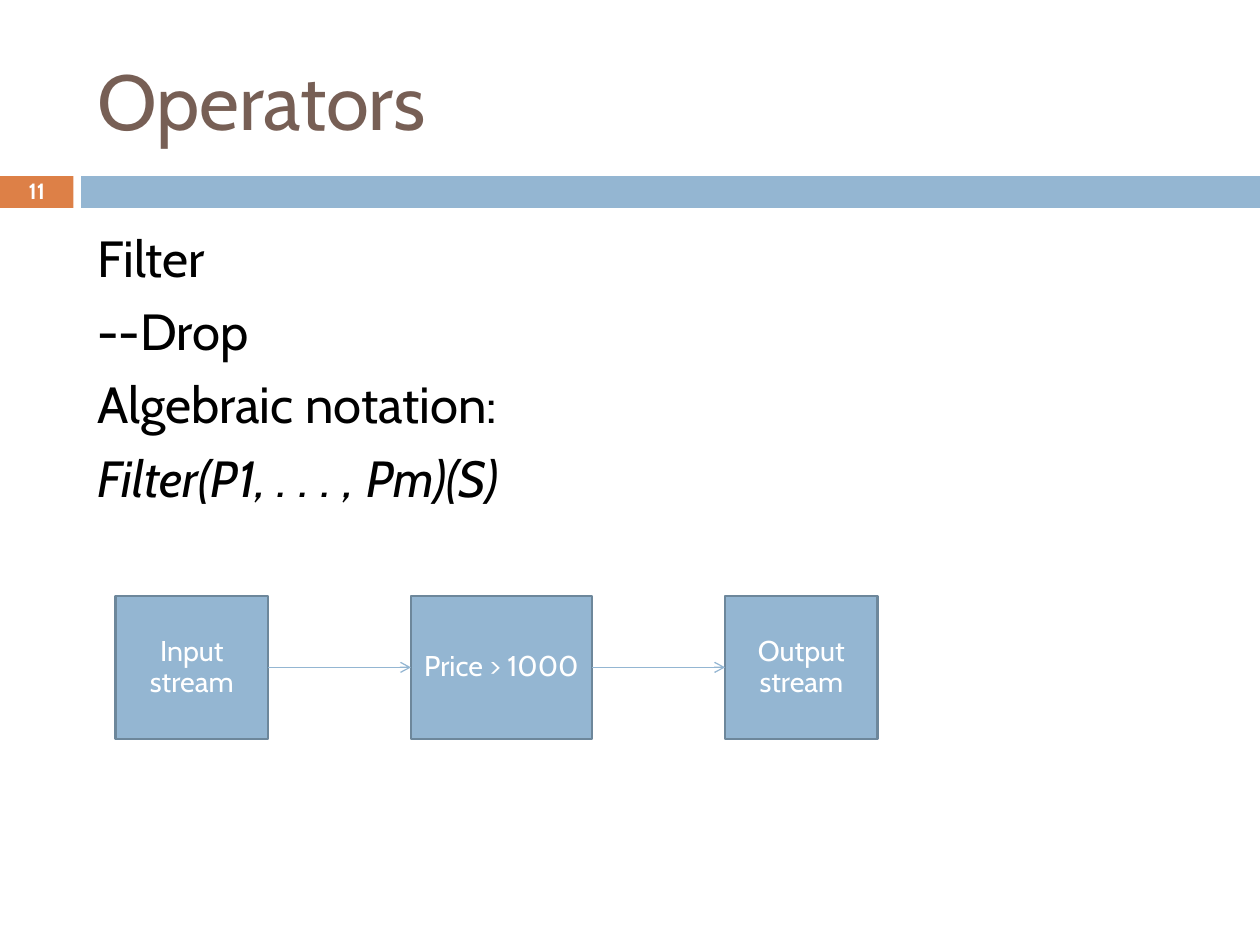
from lxml import etree
from pptx import Presentation
from pptx.dml.color import RGBColor
from pptx.enum.shapes import MSO_CONNECTOR, MSO_SHAPE
from pptx.enum.text import MSO_ANCHOR, MSO_AUTO_SIZE, PP_ALIGN
from pptx.oxml.ns import qn
from pptx.util import Pt

RECT = MSO_SHAPE.RECTANGLE
LINE = MSO_CONNECTOR.STRAIGHT
LEFT, CENTER = PP_ALIGN.LEFT, PP_ALIGN.CENTER
TOP, MIDDLE = MSO_ANCHOR.TOP, MSO_ANCHOR.MIDDLE
FIXED = MSO_AUTO_SIZE.NONE

WHITE = RGBColor(0xFF, 0xFF, 0xFF)
BLACK = RGBColor(0, 0, 0)
BROWN = RGBColor(0x77, 0x5F, 0x55)
ORANGE = RGBColor(0xDD, 0x80, 0x47)
BLUE = RGBColor(0x94, 0xB6, 0xD2)
SLATE = RGBColor(0x6D, 0x87, 0x9B)

WIDTH, HEIGHT = 793.7, 595.28
BOX_TOP, BOX_TALL = 375.4, 90
ITEMS = ["Filter", "--Drop", "Algebraic notation:", "Filter(P1, . . . , Pm)(S)"]
STEPS = [
    ("Input stream", 72.8, 96),
    ("Price > 1000", 258.9, 114),
    ("Output stream", 456.8, 96),
]


def place(shape, left, top, width, height):
    shape.left, shape.top = Pt(left), Pt(top)
    shape.width, shape.height = Pt(width), Pt(height)


def frame(shape, anchor, side=7.9, edge=4):
    text = shape.text_frame
    text.word_wrap = True
    text.auto_size = FIXED
    text.vertical_anchor = anchor
    text.margin_left = text.margin_right = Pt(side)
    text.margin_top = text.margin_bottom = Pt(edge)
    return text


def style(para, size, color, align=LEFT):
    para.alignment = align
    para.font.name = "Cabin"
    para.font.size = Pt(size)
    para.font.color.rgb = color


def add_rect(slide, left, top, width, height, fill):
    rect = slide.shapes.add_shape(RECT, Pt(left), Pt(top), Pt(width), Pt(height))
    rect.shadow.inherit = False
    rect.fill.solid()
    rect.fill.fore_color.rgb = fill
    rect.line.fill.background()
    return rect


def add_title(slide):
    title = slide.shapes.title
    place(title, 53.2, 19.8, 707.8, 85.7)
    text = frame(title, MIDDLE)
    text.text = "Operators"
    style(text.paragraphs[0], 49, BROWN)


def add_list(slide):
    body = slide.placeholders[1]
    place(body, 53.3, 138.8, 707.8, 390.2)
    text = frame(body, TOP)
    text.text = "\n".join(ITEMS)
    for para in text.paragraphs:
        para.space_before = Pt(7.7)
        props = para._p.get_or_add_pPr()
        props.set("marL", str(Pt(40)))
        props.set("indent", str(Pt(-40)))
        etree.SubElement(props, qn("a:buNone"))
        style(para, 32, BLACK)
    text.paragraphs[-1].font.italic = True


def add_band(slide):
    add_rect(slide, 0, 111, 46.3, 20, ORANGE)
    add_rect(slide, 51.2, 111, WIDTH - 51.2, 20, BLUE)


def add_number(slide):
    box = slide.shapes.add_textbox(0, Pt(110), Pt(46.3), Pt(20.8))
    text = frame(box, MIDDLE)
    text.text = "11"
    para = text.paragraphs[0]
    style(para, 13.9, WHITE, CENTER)
    para.font.bold = True


def add_step(slide, label, left, width):
    box = add_rect(slide, left, BOX_TOP, width, BOX_TALL, BLUE)
    box.line.color.rgb = SLATE
    box.line.width = Pt(1.5)
    text = frame(box, MIDDLE, 7.2, 3.6)
    text.text = label
    para = text.paragraphs[0]
    para.line_spacing = 0.93
    style(para, 18, WHITE, CENTER)
    return box


def add_arrow(slide, start, end):
    arrow = slide.shapes.add_connector(LINE, 0, 0, 0, 0)
    arrow.begin_connect(start, 3)
    arrow.end_connect(end, 1)
    arrow.line.color.rgb = BLUE
    arrow.line.width = Pt(0.79)
    props = arrow._element.spPr
    etree.SubElement(props.find(qn("a:ln")), qn("a:tailEnd"), type="arrow")
    etree.SubElement(props, qn("a:effectLst"))


def main():
    deck = Presentation()
    deck.slide_width, deck.slide_height = Pt(WIDTH), Pt(HEIGHT)
    slide = deck.slides.add_slide(deck.slide_layouts[1])
    add_band(slide)
    add_title(slide)
    add_number(slide)
    add_list(slide)
    boxes = [add_step(slide, *step) for step in STEPS]
    for start, end in zip(boxes, boxes[1:]):
        add_arrow(slide, start, end)
    deck.save("out.pptx")


if __name__ == "__main__":
    main()
